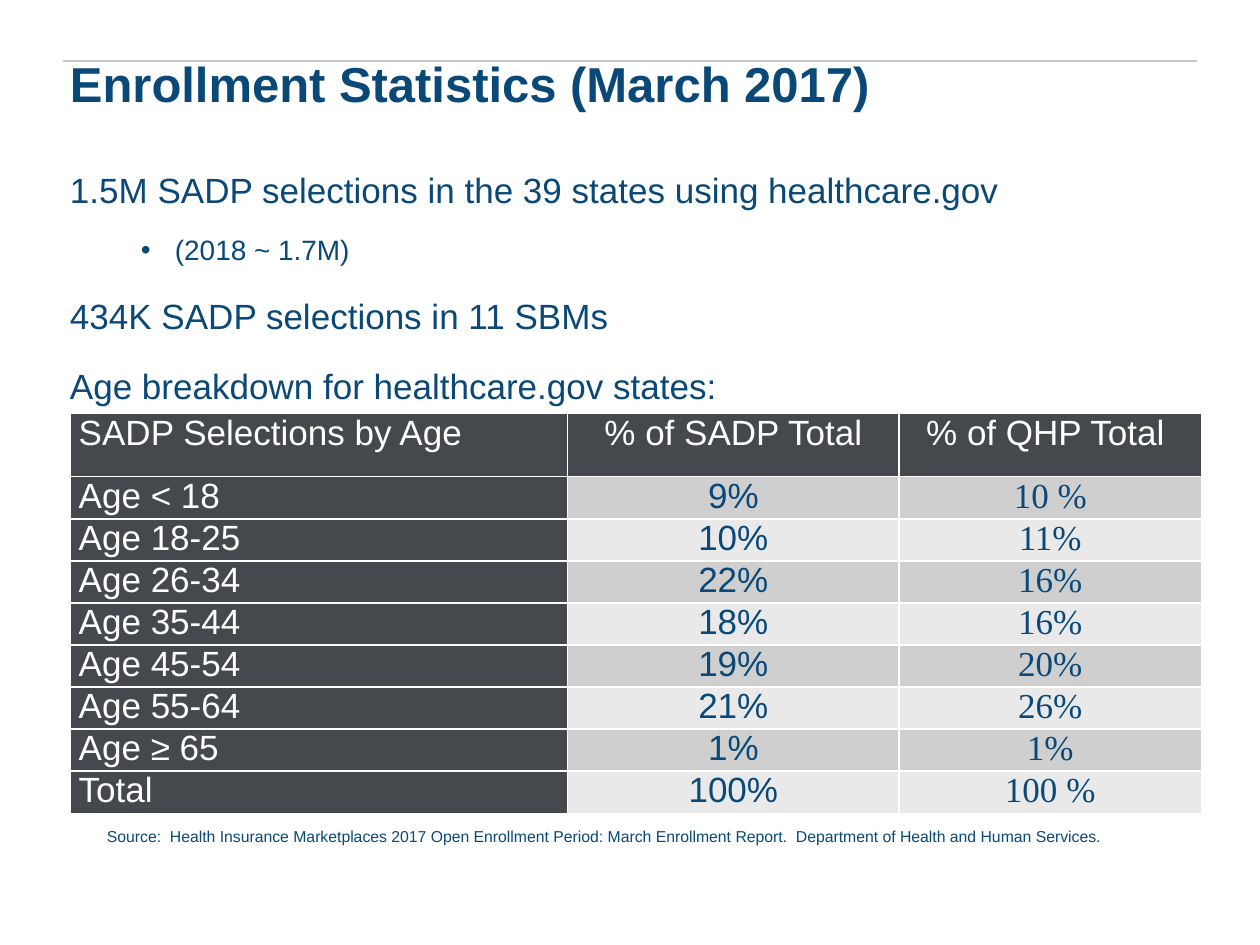
"""Build the enrollment statistics slide."""
from lxml import etree
from pptx import Presentation
from pptx.dml.color import RGBColor
from pptx.enum.shapes import MSO_SHAPE
from pptx.enum.text import PP_ALIGN
from pptx.oxml.ns import qn
from pptx.util import Pt

RECTANGLE = MSO_SHAPE.RECTANGLE
LEFT, CENTER = PP_ALIGN.LEFT, PP_ALIGN.CENTER

COLORS = {"navy": "0A4977", "rule": "C6C9CA", "dark": "45484D", "white": "FFFFFF",
          "odd band": "CFCFD0", "even band": "E9E9E9"}
SANS, SERIF = "Arial", "Times New Roman"

TITLE = "Enrollment Statistics (March 2017)"
STATEMENTS = [
    ("1.5M SADP selections in the 39 states using healthcare.gov", False),
    ("(2018 ~ 1.7M)", True),
    ("434K SADP selections in 11 SBMs", False),
    ("Age breakdown for healthcare.gov states:", False),
]
AGE_ROWS = [
    ("SADP Selections by Age", "% of SADP Total", "% of QHP Total "),
    ("Age < 18", "9%", "10 %"),
    ("Age 18-25", "10%", "11%"),
    ("Age 26-34", "22%", "16%"),
    ("Age 35-44", "18%", "16%"),
    ("Age 45-54", "19%", "20%"),
    ("Age 55-64", "21%", "26%"),
    ("Age ≥ 65", "1%", "1%"),
    ("Total", "100%", "100 %"),
]
SOURCE = ("Source:  Health Insurance Marketplaces 2017 Open Enrollment Period: "
          "March Enrollment Report.  Department of Health and Human Services.")
COLUMN_WIDTHS = [284.4, 189.4, 172.8]
HEADER_HEIGHT, ROW_HEIGHT = 36, 18


def color(name):
    return RGBColor.from_string(COLORS[name])


def style(paragraph, size, color_name="navy", font_name=SANS, bold=False):
    font = paragraph.font
    font.size, font.name, font.bold = Pt(size), font_name, bold
    font.color.rgb = color(color_name)


def add_text_frame(slide, left, top, width, height, inset=True):
    frame = slide.shapes.add_textbox(Pt(left), Pt(top), Pt(width), Pt(height)).text_frame
    frame.word_wrap = True
    if not inset:
        frame.margin_left = frame.margin_top = frame.margin_right = frame.margin_bottom = 0
    return frame


def add_bullet(paragraph):
    paragraph.level = 1
    properties = paragraph._p.get_or_add_pPr()
    properties.set("marL", str(Pt(60)))
    properties.set("indent", str(-Pt(19.5)))
    etree.SubElement(properties, qn("a:buFont")).set("typeface", SANS)
    etree.SubElement(properties, qn("a:buChar")).set("char", "•")


def add_statements(slide):
    frame = add_text_frame(slide, 40, 95, 656, 369, inset=False)
    for index, (text, is_detail) in enumerate(STATEMENTS):
        paragraph = frame.add_paragraph() if index else frame.paragraphs[0]
        paragraph.text = text
        paragraph.line_spacing = 1.05
        paragraph.space_before = Pt(4 if is_detail else 6.9)
        paragraph.space_after = Pt(7.9)
        if is_detail:
            add_bullet(paragraph)
        style(paragraph, 16 if is_detail else 20)


def add_age_table(slide):
    frame = slide.shapes.add_table(len(AGE_ROWS), len(COLUMN_WIDTHS),
                                   Pt(40), Pt(236.4), Pt(646.6), Pt(228))
    table = frame.table
    for column, width in zip(table.columns, COLUMN_WIDTHS):
        column.width = Pt(width)
    for row_index, values in enumerate(AGE_ROWS):
        table.rows[row_index].height = Pt(ROW_HEIGHT if row_index else HEADER_HEIGHT)
        band = "odd band" if row_index % 2 else "even band"
        for column_index, value in enumerate(values):
            is_heading = row_index == 0 or column_index == 0
            is_qhp_value = column_index == 2 and not is_heading
            cell = table.cell(row_index, column_index)
            cell.margin_left = cell.margin_right = Pt(5)
            cell.margin_top = cell.margin_bottom = 0
            cell.fill.solid()
            cell.fill.fore_color.rgb = color("dark" if is_heading else band)
            cell.text = value
            paragraph = cell.text_frame.paragraphs[0]
            paragraph.alignment = CENTER if column_index else LEFT
            style(paragraph, 20, "white" if is_heading else "navy",
                  SERIF if is_qhp_value else SANS)


def main():
    presentation = Presentation()
    presentation.slide_width, presentation.slide_height = Pt(720), Pt(540)
    slide = presentation.slides.add_slide(presentation.slide_layouts[6])

    rule = slide.shapes.add_shape(RECTANGLE, Pt(36), Pt(34.4), Pt(648), Pt(1))
    rule.shadow.inherit = False
    rule.fill.solid()
    rule.fill.fore_color.rgb = color("rule")
    rule.line.fill.background()

    add_statements(slide)

    title = add_text_frame(slide, 40, 34.6, 646.6, 46, inset=False).paragraphs[0]
    title.text = TITLE
    title.line_spacing = 0.9
    style(title, 28, bold=True)

    add_age_table(slide)

    source = add_text_frame(slide, 54, 468.7, 646.6, 18).paragraphs[0]
    source.text = SOURCE
    style(source, 9)

    presentation.save("out.pptx")


if __name__ == "__main__":
    main()
